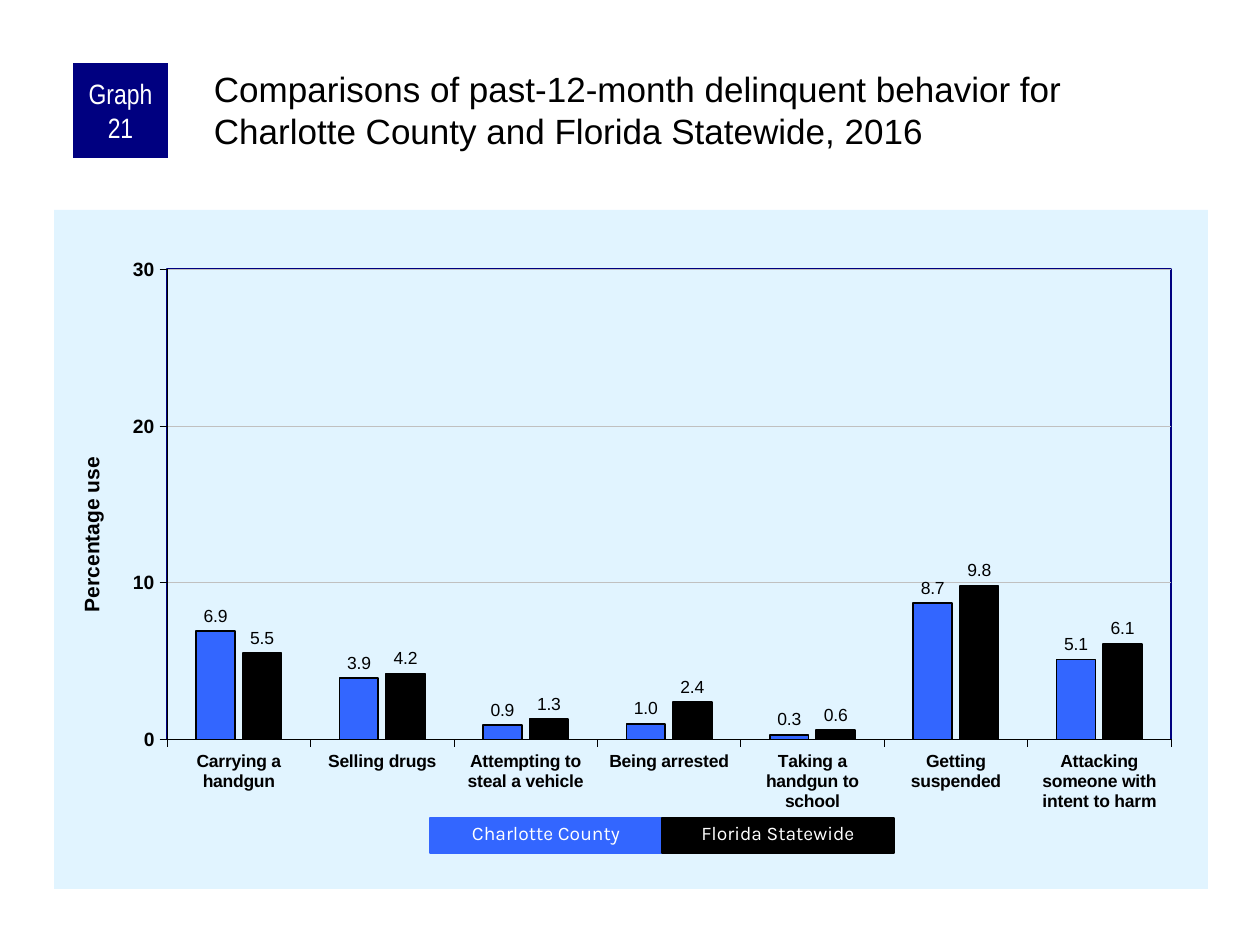
from pptx import Presentation
from pptx.chart.data import CategoryChartData
from pptx.dml.color import RGBColor
from pptx.enum.chart import XL_CHART_TYPE as ChartType
from pptx.enum.chart import XL_LABEL_POSITION as LabelPosition
from pptx.enum.chart import XL_TICK_MARK as TickMark
from pptx.enum.shapes import MSO_SHAPE as Shape
from pptx.enum.text import MSO_ANCHOR as Anchor
from pptx.enum.text import MSO_AUTO_SIZE as AutoSize
from pptx.enum.text import PP_ALIGN as Align
from pptx.oxml import parse_xml
from pptx.oxml.ns import nsdecls, qn
from pptx.util import Emu, Pt

PX_PER_INCH = 126
BLACK = RGBColor(0x00, 0x00, 0x00)
WHITE = RGBColor(0xFF, 0xFF, 0xFF)
NAVY = RGBColor(0x00, 0x00, 0x80)
BLUE = RGBColor(0x33, 0x66, 0xFF)
PALE_BLUE = RGBColor(0xE1, 0xF4, 0xFF)
GRAY = RGBColor(0xC0, 0xC0, 0xC0)

BEHAVIORS = [
    "Carrying a handgun", "Selling drugs", "Attempting to steal a vehicle",
    "Being arrested", "Taking a handgun to school", "Getting suspended",
    "Attacking someone with intent to harm",
]
AREAS = [
    ("Charlotte County", BLUE, [6.9, 3.9, 0.9, 1.0, 0.3, 8.7, 5.1]),
    ("Florida Statewide", BLACK, [5.5, 4.2, 1.3, 2.4, 0.6, 9.8, 6.1]),
]
PLOT_LAYOUT = {"x": 0.098, "y": 0.087, "w": 0.87, "h": 0.693}


def px(length):
    return Emu(round(length * 914400 / PX_PER_INCH))


def set_all(target, values):
    for name, value in values.items():
        setattr(target, name, value)


def set_font(font, size, color=BLACK, name="Arial", bold=False):
    set_all(font, {"size": Pt(size), "name": name, "bold": bold})
    font.color.rgb = color


def set_line(line, color, width):
    line.color.rgb = color
    line.width = Pt(width)


def fill_frame(frame, text, size, color, font, align, **settings):
    set_all(frame, {"word_wrap": True, **settings})
    paragraph = frame.paragraphs[0]
    paragraph.alignment = align
    run = paragraph.add_run()
    run.text = text
    set_font(run.font, size, color, font)
    return paragraph


def add_block(slide, box, color, line_width=0):
    block = slide.shapes.add_shape(Shape.RECTANGLE, *map(px, box))
    block.shadow.inherit = False
    block.fill.solid()
    block.fill.fore_color.rgb = color
    if line_width:
        set_line(block.line, color, line_width)
    else:
        block.line.fill.background()
    return block.text_frame


def add_heading(slide):
    badge = add_block(slide, (73, 63, 95, 95), NAVY)
    fill_frame(badge, "Graph 21", 16, WHITE, "Arial Narrow", Align.CENTER,
               vertical_anchor=Anchor.MIDDLE, margin_left=px(6),
               margin_right=px(6), margin_top=0, margin_bottom=0)
    title = slide.shapes.add_textbox(*map(px, (210, 63, 998, 105)))
    fill_frame(title.text_frame,
               "Comparisons of past-12-month delinquent behavior for "
               "Charlotte County and Florida Statewide, 2016",
               20, BLACK, "Arial", Align.LEFT, margin_left=px(4),
               margin_top=px(4), margin_right=0, margin_bottom=0)


def add_legend(slide):
    width = 232
    for index, (area, color, _) in enumerate(AREAS):
        key = add_block(slide, (430 + index * width, 818, width, 35), color, 0.75)
        label = fill_frame(key, area, 11, WHITE, "Karla", Align.CENTER,
                           vertical_anchor=Anchor.TOP,
                           auto_size=AutoSize.SHAPE_TO_FIT_TEXT)
        label.line_spacing = 0.9


def style_axes(chart):
    for axis, size in ((chart.category_axis, 10), (chart.value_axis, 11)):
        set_all(axis, {"major_tick_mark": TickMark.OUTSIDE,
                       "minor_tick_mark": TickMark.NONE})
        set_font(axis.tick_labels.font, size, bold=True)
        set_line(axis.format.line, BLACK, 0.25)
    percentage = chart.value_axis
    set_all(percentage, {"minimum_scale": 0, "maximum_scale": 30,
                         "major_unit": 10, "has_major_gridlines": True})
    set_line(percentage.major_gridlines.format.line, GRAY, 0.25)
    caption = percentage.axis_title.text_frame.paragraphs[0].add_run()
    caption.text = "Percentage use"
    set_font(caption.font, 12, bold=True)


def style_columns(chart):
    plot = chart.plots[0]
    set_all(plot, {"gap_width": 150, "overlap": -20,
                   "vary_by_categories": False})
    for series, (_, color, _) in zip(plot.series, AREAS):
        series.format.fill.solid()
        series.format.fill.fore_color.rgb = color
        set_line(series.format.line, BLACK, 1)
        labels = series.data_labels
        set_all(labels, {"show_value": True, "number_format": "0.0",
                         "number_format_is_linked": False,
                         "position": LabelPosition.OUTSIDE_END})
        set_font(labels.font, 10)


def area_format(fill, line):
    return parse_xml(f'<c:spPr {nsdecls("c", "a")}>{fill}{line}</c:spPr>')


def style_areas(chart):
    """Fix the inner plot position, frame the plot and fill the chart area."""
    chart_xml = chart._chartSpace.find(qn("c:chart"))
    plot_area = chart_xml.find(qn("c:plotArea"))
    for layout in plot_area.findall(qn("c:layout")):
        plot_area.remove(layout)
    modes = "".join(f'<c:{side}Mode val="edge"/>' for side in "xy")
    places = "".join(f'<c:{side} val="{part}"/>'
                     for side, part in PLOT_LAYOUT.items())
    plot_area.insert(0, parse_xml(
        f'<c:layout {nsdecls("c")}><c:manualLayout>'
        f'<c:layoutTarget val="inner"/>{modes}{places}'
        '</c:manualLayout></c:layout>'))
    solid = '<a:solidFill><a:srgbClr val="{}"/></a:solidFill>'.format
    plot_area.append(area_format(
        "<a:noFill/>", f'<a:ln w="{Pt(1)}">{solid(NAVY)}</a:ln>'))
    chart_xml.addnext(area_format(solid(PALE_BLUE), "<a:ln><a:noFill/></a:ln>"))


def add_behavior_chart(slide):
    data = CategoryChartData(number_format="0.0")
    data.categories = BEHAVIORS
    for area, _, values in AREAS:
        data.add_series(area, values)
    chart = slide.shapes.add_chart(
        ChartType.COLUMN_CLUSTERED, *map(px, (54, 210, 1154, 679)), data).chart
    set_all(chart, {"has_legend": False, "has_title": False})
    set_font(chart.font, 11.5)
    style_axes(chart)
    chart.value_axis.tick_labels.number_format = "0"
    chart.value_axis.tick_labels.number_format_is_linked = False
    style_columns(chart)
    style_areas(chart)


def main():
    presentation = Presentation()
    set_all(presentation, {"slide_width": px(1260), "slide_height": px(945)})
    slide = presentation.slides.add_slide(presentation.slide_layouts[6])
    add_behavior_chart(slide)
    add_heading(slide)
    add_legend(slide)
    presentation.save("out.pptx")


if __name__ == "__main__":
    main()
